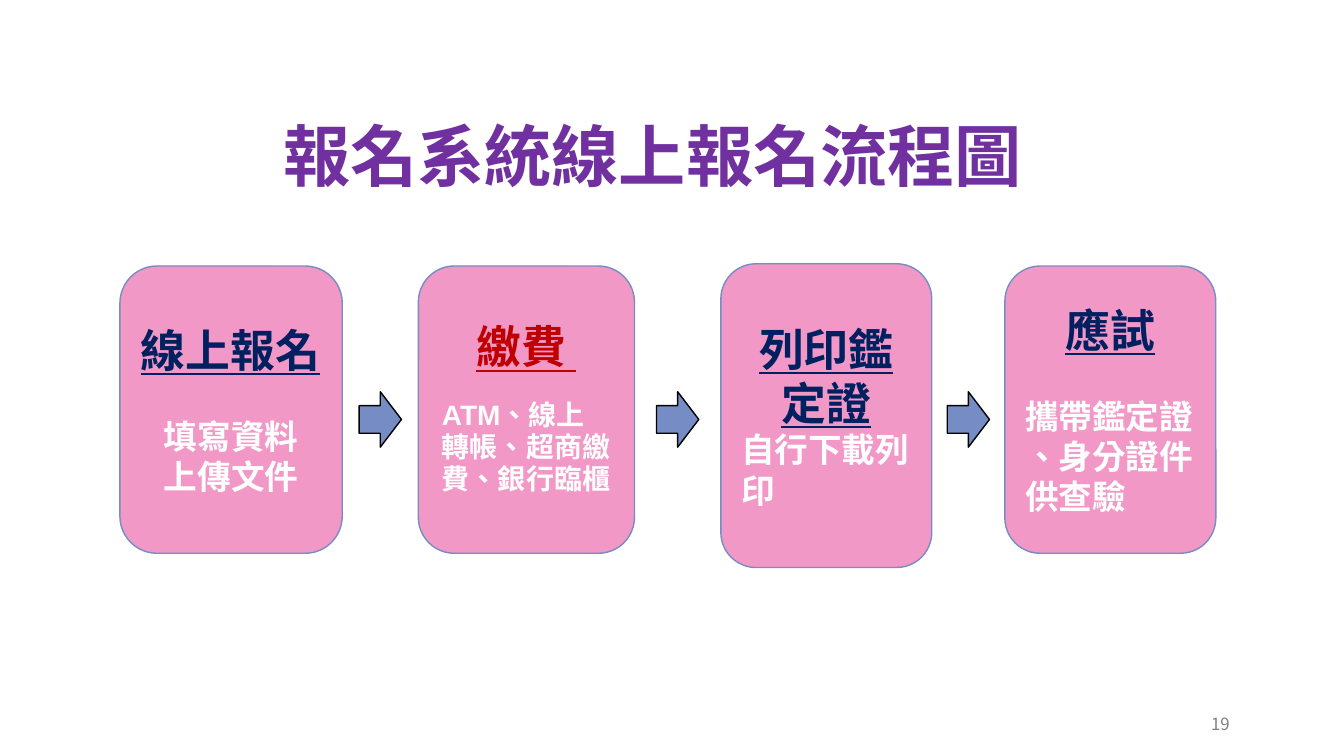
import lxml.etree
import pptx
import pptx.dml.color
import pptx.enum.lang
import pptx.enum.shapes
import pptx.enum.text
import pptx.oxml.ns
import pptx.util

Pt = pptx.util.Pt
ALIGN = pptx.enum.text.PP_ALIGN
ANCHOR = pptx.enum.text.MSO_ANCHOR
SHAPE = pptx.enum.shapes.MSO_SHAPE
CJK_FONT = "Noto Sans CJK TC"
LATIN = "Arial"
DISPLAY = "League Spartan"
NAVY, RED, WHITE = "002060", "C00000", "FFFFFF"
PINK, BLUE, BLACK = "F298C7", "768CC5", "000000"
NARROW_INSETS = (7.2, 3.6)
WIDE_INSETS = (9.36, 5.04)


def color(hex_value):
    return pptx.dml.color.RGBColor.from_string(hex_value)


def line(text, size, hex_value, font=CJK_FONT, align=ALIGN.LEFT, bold=True,
         underline=False, before=0, spacing=1.0):
    return dict(text=text, size=size, hex_value=hex_value, font=font, align=align,
                bold=bold, underline=underline, before=before, spacing=spacing)


def write(frame, lines, anchor, insets):
    frame.word_wrap = True
    frame.vertical_anchor = anchor
    frame.margin_left = frame.margin_right = Pt(insets[0])
    frame.margin_top = frame.margin_bottom = Pt(insets[1])
    for index, item in enumerate(lines):
        paragraph = frame.add_paragraph() if index else frame.paragraphs[0]
        paragraph.text = item["text"]
        paragraph.alignment = item["align"]
        paragraph.line_spacing = item["spacing"]
        paragraph.space_before = Pt(item["before"])
        font = paragraph.font
        font.size = Pt(item["size"])
        font.bold = item["bold"]
        font.underline = item["underline"]
        font.language_id = pptx.enum.lang.MSO_LANGUAGE_ID.TRADITIONAL_CHINESE
        font.color.rgb = color(item["hex_value"])
        font.name = item["font"]
        defaults = paragraph._p.pPr.find(pptx.oxml.ns.qn("a:defRPr"))
        lxml.etree.SubElement(defaults, pptx.oxml.ns.qn("a:ea"), typeface=CJK_FONT)


def add_label(slide, box, label, anchor=ANCHOR.BOTTOM):
    area = slide.shapes.add_textbox(*map(Pt, box))
    write(area.text_frame, [label], anchor, WIDE_INSETS)


def add_block(slide, kind, box, fill, outline):
    block = slide.shapes.add_shape(kind, *map(Pt, box))
    block.shadow.inherit = False
    block.fill.solid()
    block.fill.fore_color.rgb = color(fill)
    block.line.color.rgb = color(outline)
    block.line.width = Pt(1)
    return block


def add_step(slide, box, lines, insets):
    card = add_block(slide, SHAPE.ROUNDED_RECTANGLE, box, PINK, BLUE)
    write(card.text_frame, lines, ANCHOR.MIDDLE, insets)


def add_flow(slide, box, steps):
    left, top, height = box
    arrow_width, arrow_height = 30.2, 39.6
    arrow_top = top + 89.8
    previous_right = None
    for offset, width, rise, extra, insets, lines in steps:
        x = left + offset
        add_step(slide, (x, top - rise, width, height + extra), lines, insets)
        if previous_right is not None:
            arrow_left = (previous_right + x - arrow_width) / 2
            add_block(slide, SHAPE.RIGHT_ARROW,
                      (arrow_left, arrow_top, arrow_width, arrow_height), BLUE, BLACK)
        previous_right = x + width


def main():
    deck = pptx.Presentation()
    deck.slide_width, deck.slide_height = Pt(960), Pt(540)
    slide = deck.slides.add_slide(deck.slide_layouts[6])

    add_label(slide, (66.2, 54.7, 800, 90),
              line("報名系統線上報名流程圖", 48, "7030A0", align=ALIGN.CENTER, spacing=0.85))
    add_label(slide, (800.6, 504, 87.1, 25.2),
              line("19", 12, "808080", align=ALIGN.RIGHT, bold=False))

    center = ALIGN.CENTER
    registration = [
        line("線上報名", 32, NAVY, DISPLAY, underline=True),
        line("填寫資料", 24, WHITE, DISPLAY, center, before=28),
        line("上傳文件", 24, WHITE, DISPLAY, center),
    ]
    payment = [
        line("繳費\u00a0".replace("\u00a0", chr(160)), 32, RED, LATIN, center,
             underline=True, spacing=0.95),
        line("ATM、線上轉帳、超商繳費、銀行臨櫃", 20, WHITE, LATIN, before=18.7, spacing=0.95),
    ]
    admission = [
        line("列印鑑定證", 32, NAVY, LATIN, center, underline=True),
        line("自行下載列印", 24, WHITE, DISPLAY),
    ]
    exam = [
        line("應試", 32, NAVY, LATIN, center, underline=True),
        line("攜帶鑑定證", 24, WHITE, DISPLAY, before=28),
        line("、身分證件供查驗", 24, WHITE, DISPLAY),
    ]
    add_flow(slide, (85.7, 190, 205.2), [
        (0, 158.8, 0, 0, NARROW_INSETS, registration),
        (213.1, 154.4, 0, 0, WIDE_INSETS, payment),
        (429.2, 150.7, 1.6, 11.8, NARROW_INSETS, admission),
        (632.1, 150.7, 0, 0, NARROW_INSETS, exam),
    ])
    deck.save("out.pptx")


if __name__ == "__main__":
    main()
